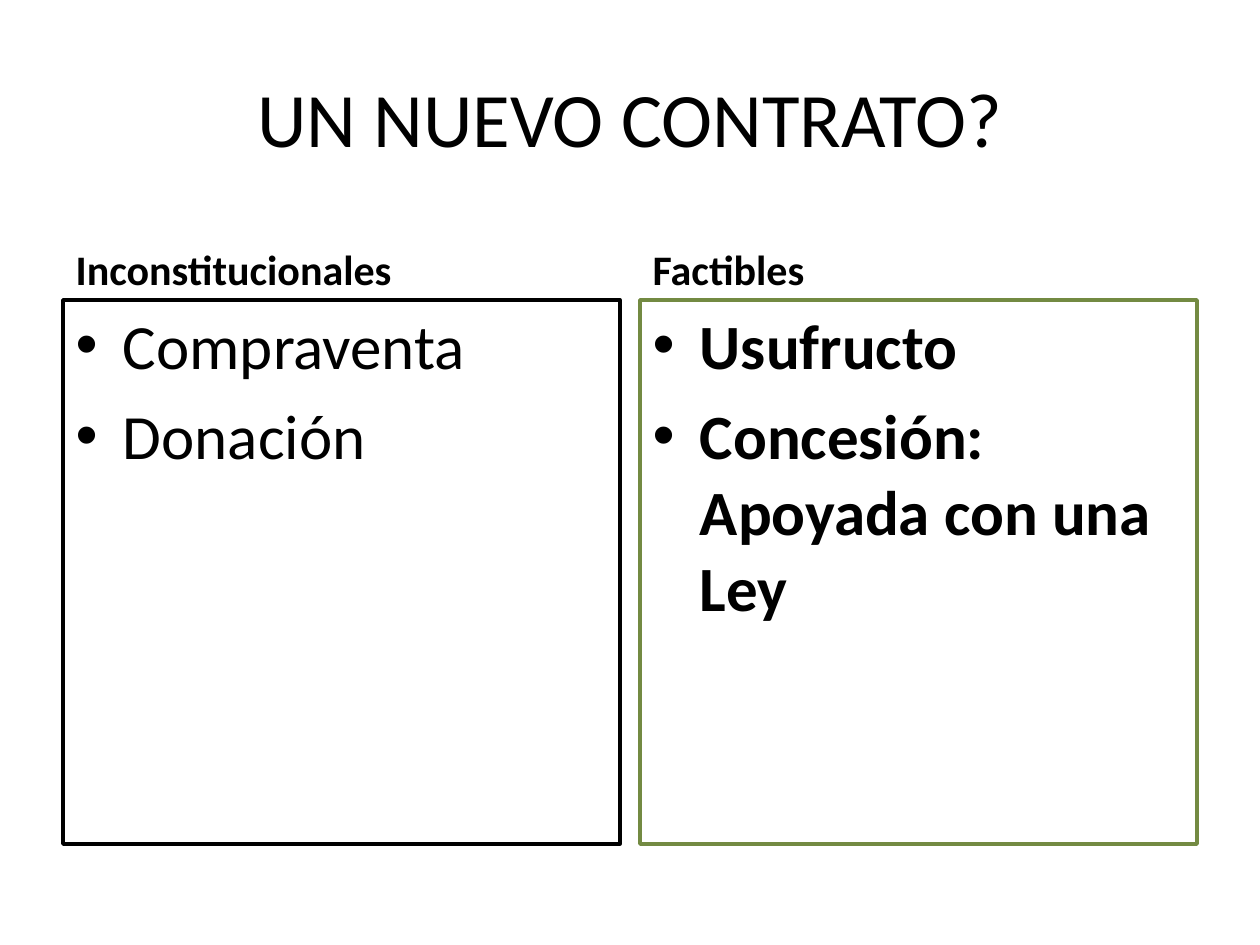
"""Build the contract comparison slide with two headed lists."""
from dataclasses import dataclass

from pptx import Presentation
from pptx.dml.color import RGBColor
from pptx.enum.text import MSO_ANCHOR as Anchor, MSO_AUTO_SIZE as AutoSize, PP_ALIGN as Align
from pptx.util import Emu, Pt

EMU_PER_PX = 914400 / 126
COLORS = {"text": "000000", "unconstitutional": "000000", "feasible": "738A42"}
FONT = "Calibri"
COMPARISON_LAYOUT = 3 + 1
MARGIN, COLUMN_WIDTH, COLUMN_STEP = 63, 557, 577


@dataclass(frozen=True)
class Column:
    heading: str
    items: tuple[str, ...]
    outline: str
    bold: bool


COLUMNS = (
    Column("Inconstitucionales", ("Compraventa", "Donación"), "unconstitutional", False),
    Column("Factibles", ("Usufructo", "Concesión: Apoyada con una Ley"), "feasible", True),
)


def px(length: int) -> Emu:
    return Emu(round(length * EMU_PER_PX))


def color(name: str) -> RGBColor:
    return RGBColor.from_string(COLORS[name])


def place(box, left: int, top: int, width: int, height: int) -> None:
    box.left, box.top, box.width, box.height = map(px, (left, top, width, height))


def write(box, lines: tuple[str, ...], size: int, anchor: Anchor,
          align: Align = Align.LEFT, bold: bool = False) -> None:
    frame = box.text_frame
    frame.word_wrap = True
    frame.auto_size = AutoSize.NONE
    frame.vertical_anchor = anchor
    for index, line in enumerate(lines):
        para = frame.add_paragraph() if index else frame.paragraphs[0]
        para.alignment = align
        para.space_before = Pt(8.6 if index else 0)
        span = para.add_run()
        span.text = line
        span.font.name = FONT
        span.font.size = Pt(size)
        span.font.bold = bold
        span.font.color.rgb = color("text")


def draw_column(heading_box, list_box, column: Column, left: int) -> None:
    place(heading_box, left, 212, COLUMN_WIDTH, 88)
    write(heading_box, (column.heading,), 24, Anchor.BOTTOM, bold=True)
    place(list_box, left, 300, COLUMN_WIDTH, 544)
    list_box.line.color.rgb = color(column.outline)
    list_box.line.width = Pt(2)
    write(list_box, column.items, 36, Anchor.TOP, bold=column.bold)


def main() -> None:
    deck = Presentation()
    deck.slide_width, deck.slide_height = px(1260), px(945)
    page = deck.slides.add_slide(deck.slide_layouts[COMPARISON_LAYOUT])
    title, *bodies = page.placeholders
    place(title, MARGIN, 38, 1134, 157)
    write(title, ("UN NUEVO CONTRATO?",), 44, Anchor.MIDDLE, Align.CENTER)
    for index, column in enumerate(COLUMNS):
        heading_box, list_box = bodies[2 * index:2 * index + 2]
        draw_column(heading_box, list_box, column, MARGIN + index * COLUMN_STEP)
    deck.save("out.pptx")


if __name__ == "__main__":
    main()
